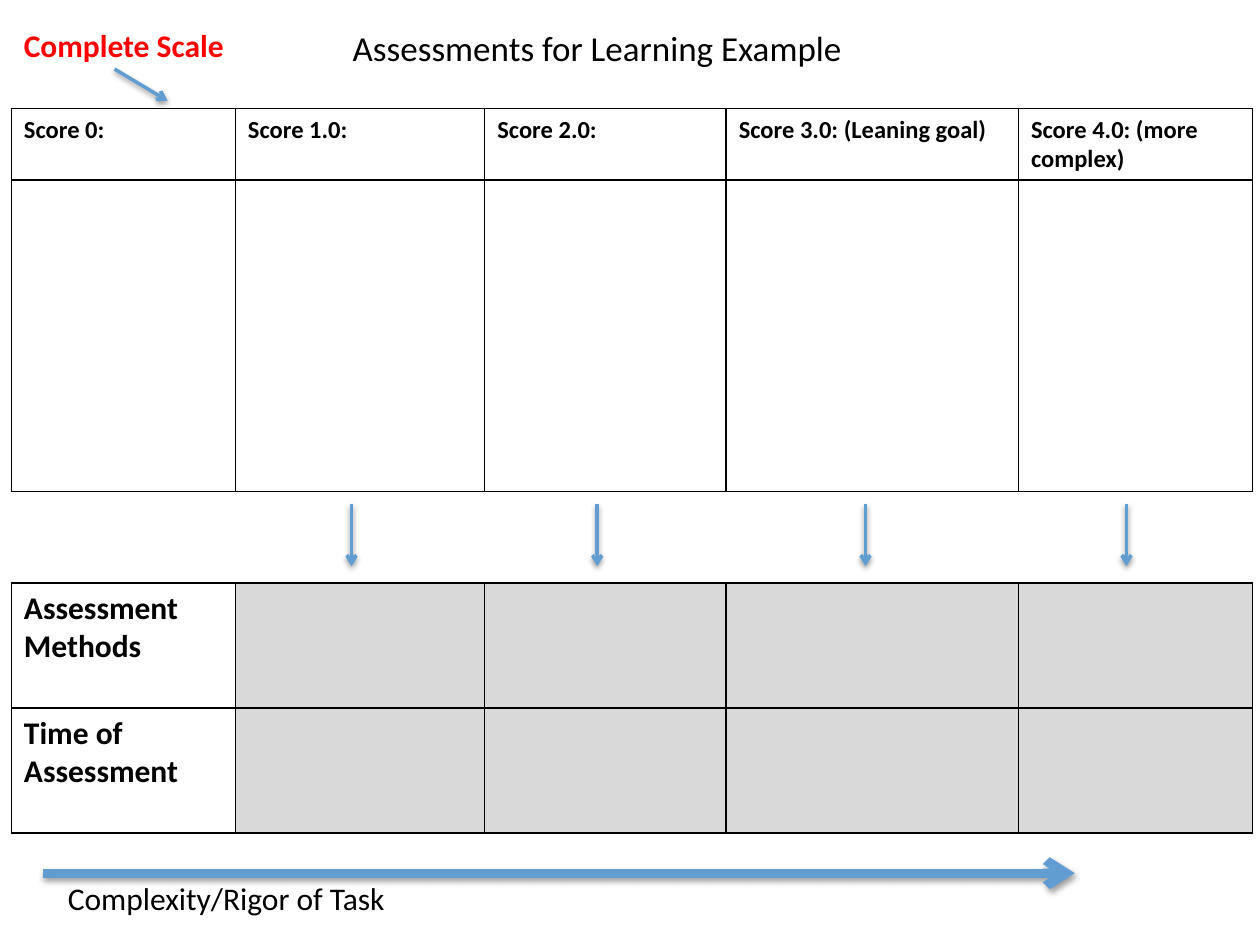
from itertools import product

from lxml.etree import SubElement
from pptx import Presentation
from pptx.dml.color import RGBColor
from pptx.enum.shapes import MSO_CONNECTOR
from pptx.enum.text import MSO_ANCHOR, MSO_AUTO_SIZE, PP_ALIGN
from pptx.oxml import parse_xml
from pptx.oxml.ns import nsdecls, qn
from pptx.util import Pt

BLACK = RGBColor(0x00, 0x00, 0x00)
RED = RGBColor(0xFF, 0x00, 0x00)
BLUE = RGBColor(0x62, 0x9D, 0xD1)
GREY = RGBColor(0xD9, 0xD9, 0xD9)

TABLE_LEFT = 6.5
SCORE_WIDTHS = [128, 142.5, 138, 167, 133.7]
SCORES = ["Score 0:", "Score 1.0:", "Score 2.0:",
          "Score 3.0: (Leaning goal)", "Score 4.0: (more complex)"]
ASSESSMENT_ROWS = ["Assessment Methods", "Time of Assessment"]
SCORE_ARROWS = [200.9, 341.3, 494.6, 643.7]

SHADOW = (
    f'<a:effectLst {nsdecls("a")}>'
    '<a:outerShdw blurRad="40000" dist="20000" dir="5400000" rotWithShape="0">'
    '<a:srgbClr val="000000"><a:alpha val="38000"/></a:srgbClr>'
    '</a:outerShdw></a:effectLst>'
)


class ScaleSlide:
    """Draws the parts of an assessment scale in one style."""

    font_name = "Calibri"

    def __init__(self, slide):
        self.slide = slide

    def style(self, paragraph, size, color=BLACK, bold=False):
        font = paragraph.font
        font.name = self.font_name
        font.size = Pt(size)
        font.bold = bold
        font.color.rgb = color

    def title(self, text, left, top, width, height, size):
        heading = self.slide.shapes.title
        heading.left, heading.top = Pt(left), Pt(top)
        heading.width, heading.height = Pt(width), Pt(height)
        frame = heading.text_frame
        frame.text = text
        frame.vertical_anchor = MSO_ANCHOR.TOP
        frame.auto_size = MSO_AUTO_SIZE.SHAPE_TO_FIT_TEXT
        frame.paragraphs[0].alignment = PP_ALIGN.CENTER
        self.style(frame.paragraphs[0], size)

    def label(self, text, left, top, width, height, wrap=True, **look):
        box = self.slide.shapes.add_textbox(Pt(left), Pt(top), Pt(width), Pt(height))
        frame = box.text_frame
        frame.word_wrap = wrap
        frame.auto_size = MSO_AUTO_SIZE.SHAPE_TO_FIT_TEXT
        frame.text = text
        self.style(frame.paragraphs[0], 18, **look)

    def arrow(self, x1, y1, x2, y2, weight=2):
        line = self.slide.shapes.add_connector(
            MSO_CONNECTOR.STRAIGHT, Pt(x1), Pt(y1), Pt(x2), Pt(y2))
        line.line.color.rgb = BLUE
        line.line.width = Pt(weight)
        SubElement(line.line._get_or_add_ln(), qn("a:tailEnd"), type="arrow")
        line._element.spPr.append(parse_xml(SHADOW))

    def border(self, cell):
        properties = cell._tc.get_or_add_tcPr()
        for side in ("lnL", "lnR", "lnT", "lnB"):
            edge = SubElement(properties, qn(f"a:{side}"), w=str(Pt(1)))
            fill = SubElement(edge, qn("a:solidFill"))
            SubElement(fill, qn("a:srgbClr"), val=str(BLACK))

    def table(self, top, heights, texts, size, empty_fill=None):
        grid = self.slide.shapes.add_table(
            len(heights), len(SCORE_WIDTHS), Pt(TABLE_LEFT), Pt(top),
            Pt(sum(SCORE_WIDTHS)), Pt(sum(heights))).table
        grid.first_row = grid.horz_banding = False
        for column, width in zip(grid.columns, SCORE_WIDTHS):
            column.width = Pt(width)
        for row, height in zip(grid.rows, heights):
            row.height = Pt(height)
        for place in product(range(len(heights)), range(len(SCORE_WIDTHS))):
            cell = grid.cell(*place)
            self.border(cell)
            if place in texts:
                cell.text = texts[place]
                self.style(cell.text_frame.paragraphs[0], size, bold=True)
            if empty_fill and place not in texts:
                cell.fill.solid()
                cell.fill.fore_color.rgb = empty_fill
            else:
                cell.fill.background()


def main():
    deck = Presentation()
    deck.slide_width, deck.slide_height = Pt(720), Pt(540)
    scale = ScaleSlide(deck.slides.add_slide(deck.slide_layouts[5]))

    scale.title("Assessments for Learning Example", 49, 11.5, 584.6, 31.5, size=20)
    scale.label("Complete Scale", TABLE_LEFT, 11.5, 143.3, 29, color=RED, bold=True)
    scale.arrow(65.5, 39.5, 95.8, 57.6)

    scale.table(62, [41, 178], {(0, i): text for i, text in enumerate(SCORES)}, 14)
    for x in SCORE_ARROWS:
        scale.arrow(x, 288, x, 323.5)
    scale.table(333, [71.5, 71.5],
                {(i, 0): text for i, text in enumerate(ASSESSMENT_ROWS)}, 18, GREY)

    scale.arrow(24.5, 499, 614.2, 499, weight=5.25)
    scale.label("Complexity/Rigor of Task", 31.7, 499, 203, 29, wrap=False)

    deck.save("out.pptx")


if __name__ == "__main__":
    main()
